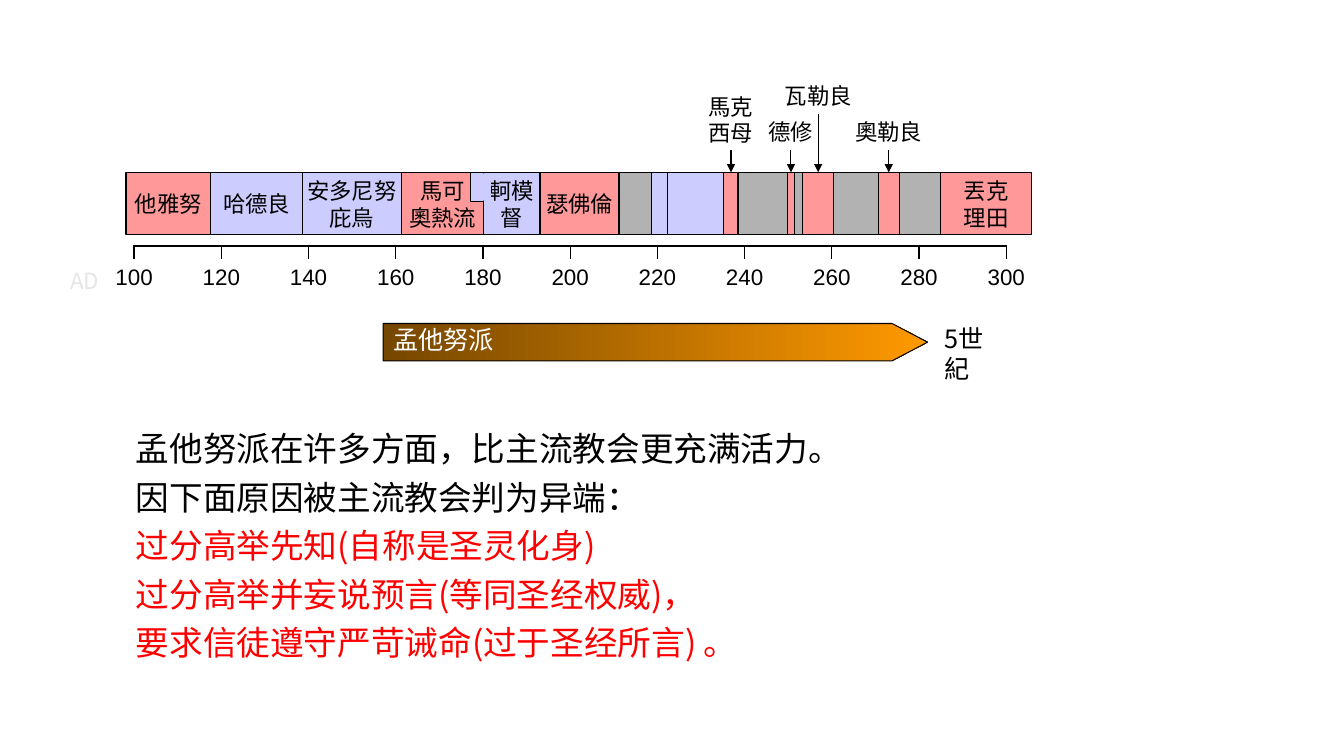
import pptx
import pptx.util
import pptx.dml.color
import pptx.enum.dml
import pptx.enum.shapes
import pptx.enum.text
import pptx.oxml
import pptx.oxml.ns
from dataclasses import dataclass
from lxml import etree


@dataclass(frozen=True)
class Theme:
    black: str = "000000"
    white: str = "FFFFFF"
    faint: str = "E7E6E6"
    persecutor: str = "FF9999"
    tolerant: str = "CCCCFF"
    other: str = "B2B2B2"
    warning: str = "FF0000"
    amber_dark: str = "764700"
    amber: str = "FF9900"
    label_font: str = "Calibri"
    axis_font: str = "Arial"
    body_font: str = "Noto Sans CJK SC"
    label: int = 16
    period: int = 18
    body: int = 24
    line: float = 0.75


T = Theme()
EMU_PER_PX = 9144  # 100 px to the inch
CENTER = pptx.enum.text.PP_ALIGN.CENTER
LEFT = pptx.enum.text.PP_ALIGN.LEFT
SHAPE = pptx.enum.shapes.MSO_SHAPE


def px(*lengths):
    return [round(n * EMU_PER_PX) for n in lengths]


def rgb(color):
    return pptx.dml.color.RGBColor.from_string(color)


def write(tf, lines, size, font, color=T.black, align=CENTER, spacing=None):
    """Each line is a string, or a (string, color) pair."""
    for i, line in enumerate(lines):
        text, line_color = (line, color) if isinstance(line, str) else line
        p = tf.paragraphs[0] if i == 0 else tf.add_paragraph()
        p.alignment = align
        if spacing:
            p.line_spacing = spacing
        r = p.add_run()
        r.text = text
        r.font.size = pptx.util.Pt(size)
        r.font.name = font
        r.font.color.rgb = rgb(line_color)


def add_text(slide, box, lines, size, font, **style):
    tf = slide.shapes.add_textbox(*px(*box)).text_frame
    tf.word_wrap = True
    write(tf, lines, size, font, **style)


def add_block(slide, box, color, kind=SHAPE.RECTANGLE, outlined=True):
    sp = slide.shapes.add_shape(kind, *px(*box))
    sp.shadow.inherit = False
    if color:
        sp.fill.solid()
        sp.fill.fore_color.rgb = rgb(color)
    if outlined:
        sp.line.color.rgb = rgb(T.black)
        sp.line.width = pptx.util.Pt(T.line)
    else:
        sp.line.fill.background()
    sp.text_frame.word_wrap = False
    return sp


# Emperors: (right edge measured from the left of the band, color, name lines)
REIGNS = [
    (84, T.persecutor, ["他雅努"]),
    (175, T.tolerant, ["哈德良"]),
    (273, T.persecutor, ["安多尼努", "庇烏"]),
    (355, T.persecutor, ["馬可", "奧熱流"]),
    (410, T.tolerant, ["軻模", "督"]),
    (411, T.other, []),
    (489, T.persecutor, ["瑟佛倫"]),
    (521, T.other, []),
    (537, T.tolerant, []),
    (593, T.tolerant, []),
    (607, T.persecutor, []),
    (656, T.other, []),
    (663, T.persecutor, []),
    (671, T.other, []),
    (702, T.persecutor, []),
    (746, T.other, []),
    (767, T.persecutor, []),
    (808, T.other, []),
    (898, T.persecutor, ["丟克", "理田"]),
]
REIGNS[2] = (273, T.tolerant, REIGNS[2][2])

# Named arrows: (reign index, lines, width, rise of label, rise of arrow)
CALLOUTS = [
    (10, ["馬克", "西母"], 69, 84, 22),
    (12, ["德修"], 70, 59, 22),
    (14, ["瓦勒良"], 98, 94, 58),
    (16, ["奧勒良"], 87, 59, 22),
]


def emperor_band(slide, left, top, height):
    blocks, start = [], 0
    for end, color, name in REIGNS:
        sp = add_block(slide, (left + start, top, end - start, height), color)
        sp.text_frame.vertical_anchor = pptx.enum.text.MSO_ANCHOR.MIDDLE
        write(sp.text_frame, name, T.label, T.label_font)
        blocks.append(sp)
        start = end
    # Joint reign: a step cut into the neighbouring block
    add_block(slide, (left + 342, top, 13, 29), T.tolerant)
    add_block(slide, (left + 352, top + 1, 10, 27), T.tolerant, outlined=False)
    return blocks


def callouts(slide, blocks, top):
    for index, lines, width, label_rise, arrow_rise in CALLOUTS:
        block = blocks[index]
        middle = block.left + block.width // 2
        x = middle / EMU_PER_PX
        add_text(slide, (x - width / 2, top - label_rise, width, 27 * len(lines) + 10),
                 lines, T.label, T.label_font)
        arrow = slide.shapes.add_connector(
            pptx.enum.shapes.MSO_CONNECTOR.STRAIGHT,
            *px(x, top - arrow_rise, x, top))
        arrow.end_connect(block, 0)
        arrow.line.color.rgb = rgb(T.black)
        arrow.line.width = pptx.util.Pt(T.line)
        etree.SubElement(arrow.line._get_or_add_ln(),
                         pptx.oxml.ns.qn("a:tailEnd"), type="triangle")
        etree.SubElement(arrow._element.spPr, pptx.oxml.ns.qn("a:effectLst"))


def add_row(slide, box, columns, borders):
    """One-row table; borders maps sides (L, R, T, B) to colors."""
    left, top, width, height = box
    table = slide.shapes.add_table(1, columns, *px(*box)).table
    table.first_row = table.horz_banding = False
    for column, cell in zip(table.columns, table.iter_cells()):
        column.width = px(width / columns)[0]
        tc_pr = cell._tc.get_or_add_tcPr()
        for side in "LRTB":
            ln = etree.SubElement(tc_pr, pptx.oxml.ns.qn("a:ln" + side), w="12700")
            if side in borders:
                fill = etree.SubElement(ln, pptx.oxml.ns.qn("a:solidFill"))
                etree.SubElement(fill, pptx.oxml.ns.qn("a:srgbClr"), val=borders[side])
            else:
                etree.SubElement(ln, pptx.oxml.ns.qn("a:noFill"))
        cell.fill.background()
    return table


def year_axis(slide, left, top, width):
    years = range(100, 301, 20)
    steps = len(years) - 1
    step = width / steps
    # Ticks: the label row covers their lower part
    add_row(slide, (left, top, width, 40), steps, dict.fromkeys("LRTB", T.black))
    labels = add_row(slide, (left - step / 2, top + 14, width + step, 37),
                     len(years), dict.fromkeys("TB", T.white))
    for year, cell in zip(years, labels.iter_cells()):
        cell.fill.solid()
        cell.fill.fore_color.rgb = rgb(T.white)
        write(cell.text_frame, [str(year)], T.label, T.axis_font)
    add_text(slide, (left - 73, top + 16, 50, 37), ["AD"], T.label, T.body_font,
             color=T.faint, align=LEFT)


def movement_arrow(slide, left, top, width, height):
    sp = add_block(slide, (left, top, width, height), None, SHAPE.PENTAGON)
    sp.adjustments[0] = 0.95
    sp.fill.gradient()
    sp.fill.gradient_angle = 0
    for stop, color, position in zip(sp.fill.gradient_stops,
                                     (T.amber_dark, T.amber), (0, 1)):
        stop.color.rgb = rgb(color)
        stop.position = position
    sp.text_frame.vertical_anchor = pptx.enum.text.MSO_ANCHOR.TOP
    write(sp.text_frame, ["孟他努派"], T.period, T.label_font, T.white, LEFT, 0.85)
    add_text(slide, (left + width + 7, top - 5, 83, 40), ["5世紀"],
             T.period, T.body_font, align=LEFT)


def explanation(slide, box):
    add_text(slide, box, [
        "孟他努派在许多方面，比主流教会更充满活力。",
        "因下面原因被主流教会判为异端：",
        ("过分高举先知(自称是圣灵化身)", T.warning),
        ("过分高举并妄说预言(等同圣经权威)，", T.warning),
        ("要求信徒遵守严苛诫命(过于圣经所言) 。", T.warning),
    ], T.body, T.body_font, align=LEFT, spacing=1.2)


def main():
    prs = pptx.Presentation()
    prs.slide_width, prs.slide_height = px(1333, 750)
    slide = prs.slides.add_slide(prs.slide_layouts[6])
    year_axis(slide, 133, 244, 865)
    blocks = emperor_band(slide, 125, 171, 62)
    callouts(slide, blocks, 171)
    explanation(slide, (125, 412, 863, 294))
    movement_arrow(slide, 380, 321, 540, 37)
    prs.save("out.pptx")


if __name__ == "__main__":
    main()
